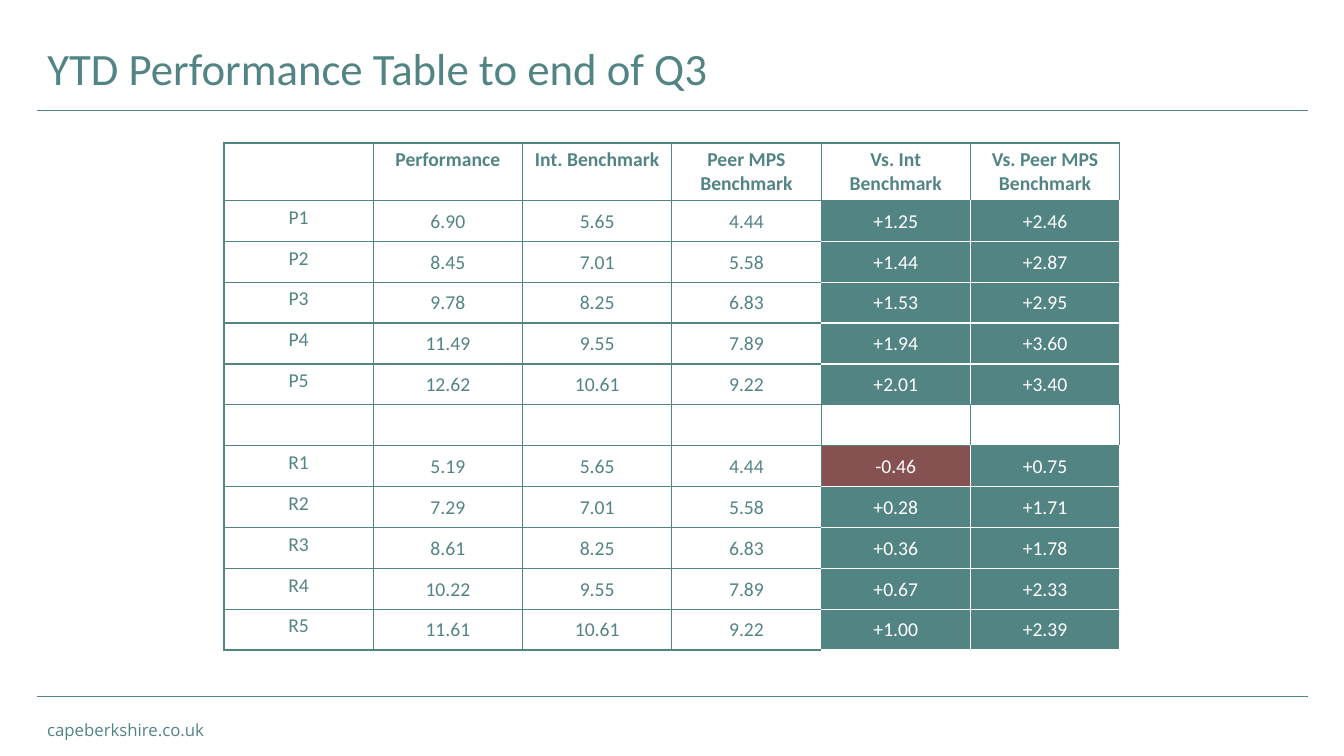
from lxml.etree import SubElement
from pptx import Presentation
from pptx.dml.color import RGBColor
from pptx.enum.shapes import MSO_CONNECTOR
from pptx.enum.text import MSO_ANCHOR, MSO_AUTO_SIZE, PP_ALIGN
from pptx.oxml.ns import qn
from pptx.util import Pt

TEAL, RED, WHITE = "528484", "855151", "FFFFFF"

HEADINGS = ["", "Performance", "Int. Benchmark", "Peer MPS Benchmark",
            "Vs. Int Benchmark", "Vs. Peer MPS Benchmark"]
RESULTS = [
    ["P1", "6.90", "5.65", "4.44", "+1.25", "+2.46"],
    ["P2", "8.45", "7.01", "5.58", "+1.44", "+2.87"],
    ["P3", "9.78", "8.25", "6.83", "+1.53", "+2.95"],
    ["P4", "11.49", "9.55", "7.89", "+1.94", "+3.60"],
    ["P5", "12.62", "10.61", "9.22", "+2.01", "+3.40"],
    [""] * 6,
    ["R1", "5.19", "5.65", "4.44", "-0.46", "+0.75"],
    ["R2", "7.29", "7.01", "5.58", "+0.28", "+1.71"],
    ["R3", "8.61", "8.25", "6.83", "+0.36", "+1.78"],
    ["R4", "10.22", "9.55", "7.89", "+0.67", "+2.33"],
    ["R5", "11.61", "10.61", "9.22", "+1.00", "+2.39"],
]


def color(hex_string):
    return RGBColor.from_string(hex_string)


def write(frame, text, size=14, font="Calibri", fill=TEAL, bold=False,
          align=PP_ALIGN.LEFT, spacing=None):
    paragraph = frame.paragraphs[0]
    paragraph.alignment = align
    paragraph.line_spacing = spacing
    run = paragraph.add_run()
    run.text = text
    run.font.size = Pt(size)
    run.font.name = font
    run.font.bold = bold
    run.font.color.rgb = color(fill)


def cell_fill(rows, row, column):
    """Differences are teal when ahead of the benchmark and red when behind."""
    if row == 0 or column < 4 or not rows[row][column]:
        return None
    return RED if rows[row][column].startswith("-") else TEAL


def border_color(rows, row, column, row_step, column_step):
    """Filled cells are parted by white; every other border is teal."""
    next_row, next_column = row + row_step, column + column_step
    outside = next_row == len(rows) or next_column == len(rows[0])
    if cell_fill(rows, row, column) and (
            outside or cell_fill(rows, next_row, next_column)):
        return WHITE
    return TEAL


class PerformanceSlide:
    border_steps = {"a:lnL": (0, -1), "a:lnR": (0, 1),
                    "a:lnT": (-1, 0), "a:lnB": (1, 0)}

    def __init__(self, presentation):
        self.slide = presentation.slides.add_slide(presentation.slide_layouts[5])

    def title(self, text, left, top, width, height):
        shape = self.slide.shapes.title
        shape.left, shape.top = Pt(left), Pt(top)
        shape.width, shape.height = Pt(width), Pt(height)
        shape.text_frame.vertical_anchor = MSO_ANCHOR.MIDDLE
        shape.text_frame.auto_size = MSO_AUTO_SIZE.NONE
        write(shape.text_frame, text, size=32, spacing=0.9)

    def footer(self, text, left, top, width, height):
        shape = self.slide.shapes.add_textbox(Pt(left), Pt(top), Pt(width), Pt(height))
        shape.text_frame.word_wrap = True
        write(shape.text_frame, text, size=12, font="Open Sans")

    def rule(self, left, right, y):
        line = self.slide.shapes.add_connector(
            MSO_CONNECTOR.STRAIGHT, Pt(left), Pt(y), Pt(right), Pt(y))
        line.line.color.rgb = color(TEAL)
        line.line.width = Pt(0.75)
        SubElement(line._element.spPr, qn("a:effectLst"))

    def table(self, rows, left, top, width, header_height, row_height):
        height = header_height + row_height * (len(rows) - 1)
        table = self.slide.shapes.add_table(
            len(rows), len(rows[0]), Pt(left), Pt(top), Pt(width), Pt(height)).table
        table.first_row = table.horz_banding = False
        for row, values in enumerate(rows):
            table.rows[row].height = Pt(row_height if row else header_height)
            for column in range(len(values)):
                self.cell(table.cell(row, column), rows, row, column)

    def cell(self, cell, rows, row, column):
        text, fill = rows[row][column], cell_fill(rows, row, column)
        if row and column and text:
            cell.vertical_anchor = MSO_ANCHOR.MIDDLE
            cell.margin_left = cell.margin_right = cell.margin_top = Pt(0.75)
            cell.margin_bottom = Pt(0)
        write(cell.text_frame, text, bold=row == 0, align=PP_ALIGN.CENTER,
              fill=WHITE if fill else TEAL)
        # Borders come before the fill in the cell properties
        properties = cell._tc.get_or_add_tcPr()
        for tag, steps in self.border_steps.items():
            border = SubElement(properties, qn(tag), w=str(Pt(1)))
            solid = SubElement(border, qn("a:solidFill"))
            SubElement(solid, qn("a:srgbClr"),
                       val=border_color(rows, row, column, *steps))
        if fill:
            cell.fill.solid()
            cell.fill.fore_color.rgb = color(fill)
        else:
            cell.fill.background()


def main():
    presentation = Presentation()
    presentation.slide_width, presentation.slide_height = Pt(960), Pt(540)
    page = PerformanceSlide(presentation)

    # Footer and rules
    page.footer("capeberkshire.co.uk", 26.6, 510.5, 275.8, 21.6)
    for y in (497.5, 78.8):
        page.rule(26.6, 934.6, y)

    # Title and results
    page.title("YTD Performance Table to end of Q3", 26.6, 29.5, 828, 42.5)
    page.table([HEADINGS] + RESULTS, 160, 102.2, 640, 41, 29.2)

    presentation.save("out.pptx")


if __name__ == "__main__":
    main()
